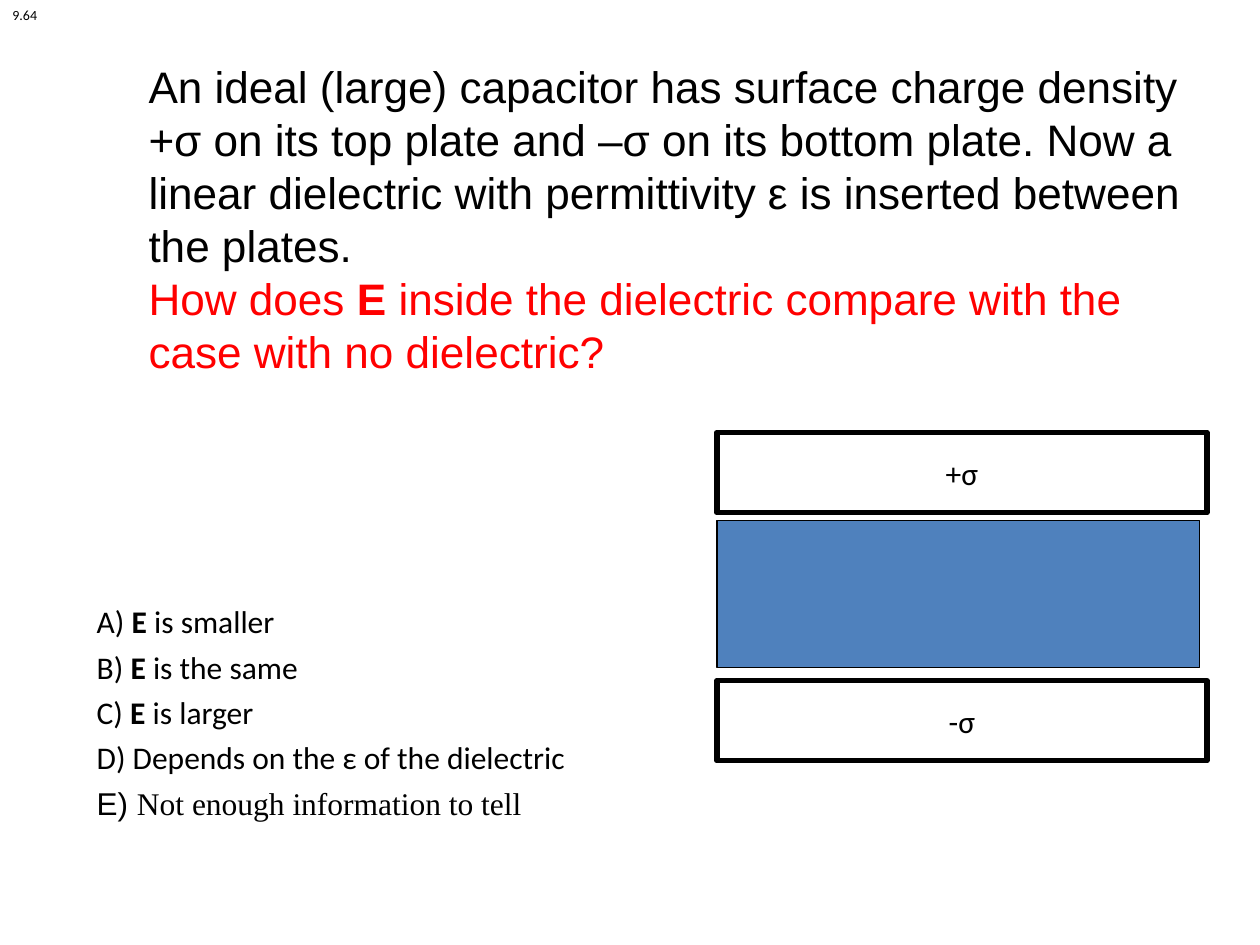
from dataclasses import dataclass
from typing import Optional

import pptx
import pptx.dml.color
import pptx.enum.shapes
import pptx.enum.text
import pptx.util

Pt = pptx.util.Pt
Color = pptx.dml.color.RGBColor
Anchor = pptx.enum.text.MSO_ANCHOR
Align = pptx.enum.text.PP_ALIGN


@dataclass(frozen=True)
class Theme:
    black: str = "000000"
    red: str = "FF0000"
    white: str = "FFFFFF"
    blue: str = "4F81BD"
    question_font: str = "Arial"
    body_font: str = "Calibri"
    serif_font: str = "Times New Roman"
    question_size: float = 25.2
    body_size: float = 18
    number_size: float = 8


THEME = Theme()


@dataclass(frozen=True)
class Area:
    left: float
    top: float
    width: float
    height: float

    def lengths(self) -> list:
        return [Pt(value) for value in (self.left, self.top, self.width, self.height)]


@dataclass(frozen=True)
class Piece:
    text: str
    font: str = THEME.body_font
    size: float = THEME.body_size
    color: str = THEME.black
    bold: bool = False


@dataclass(frozen=True)
class Layer:
    area: Area
    fill: str
    border: float
    label: Optional[str] = None


def question(text: str, color: str = THEME.black, bold: bool = False) -> Piece:
    return Piece(text, THEME.question_font, THEME.question_size, color, bold)


def field_option(letter: str, ending: str) -> list[Piece]:
    return [Piece(f"{letter}) "), Piece("E", bold=True), Piece(f" is {ending}")]


QUESTION = [
    [question("An ideal (large) capacitor has surface charge density +σ on its top plate "
              "and –σ on its bottom plate. Now a linear dielectric with permittivity ε "
              "is inserted between the plates.")],
    [question("How does ", THEME.red),
     question("E", THEME.red, bold=True),
     question(" inside the dielectric compare with the case with no dielectric?", THEME.red)],
]
OPTIONS = [
    field_option("A", "smaller"),
    field_option("B", "the same"),
    field_option("C", "larger"),
    [Piece("D) Depends on the ε of the dielectric")],
    [Piece("Ε) ", THEME.question_font),
     Piece("Not enough information to tell", THEME.serif_font)],
]
NUMBER = [[Piece("9.64", size=THEME.number_size)]]
CAPACITOR = [
    Layer(Area(409.7, 297.4, 275.8, 84.2), THEME.blue, 0.75),
    Layer(Area(409.7, 247, 280, 46), THEME.white, 3, "+σ"),
    Layer(Area(409.7, 388.8, 280, 46), THEME.white, 3, "-σ"),
]


def add_pieces(para, pieces: list[Piece]) -> None:
    for piece in pieces:
        span = para.add_run()
        span.text = piece.text
        span.font.name = piece.font
        span.font.size = Pt(piece.size)
        span.font.bold = piece.bold
        span.font.color.rgb = Color.from_string(piece.color)


def add_text(page, area: Area, paragraphs: list[list[Piece]], wrap: bool = True):
    frame = page.shapes.add_textbox(*area.lengths()).text_frame
    frame.word_wrap = wrap
    frame.vertical_anchor = Anchor.TOP
    for index, pieces in enumerate(paragraphs):
        para = frame.add_paragraph() if index else frame.paragraphs[0]
        add_pieces(para, pieces)
    return frame


def add_layer(page, layer: Layer) -> None:
    box = page.shapes.add_shape(
        pptx.enum.shapes.MSO_SHAPE.RECTANGLE, *layer.area.lengths())
    box.shadow.inherit = False
    box.fill.solid()
    box.fill.fore_color.rgb = Color.from_string(layer.fill)
    box.line.color.rgb = Color.from_string(THEME.black)
    box.line.width = Pt(layer.border)
    if layer.label:
        frame = box.text_frame
        frame.word_wrap = False
        frame.vertical_anchor = Anchor.MIDDLE
        para = frame.paragraphs[0]
        para.alignment = Align.CENTER
        add_pieces(para, [Piece(layer.label)])


def main() -> None:
    deck = pptx.Presentation()
    deck.slide_width, deck.slide_height = Pt(720), Pt(540)
    page = deck.slides.add_slide(deck.slide_layouts[6])

    title = add_text(page, Area(77.8, 33.1, 623.5, 213.8), QUESTION)
    title.margin_top = Pt(1)
    for para in title.paragraphs:
        para.line_spacing = Pt(30.3)

    options = add_text(page, Area(48.2, 340.6, 418.3, 133.2), OPTIONS)
    for para in options.paragraphs[1:]:
        para.line_spacing = 1.2

    for layer in CAPACITOR:
        add_layer(page, layer)

    add_text(page, Area(0, 0, 28.8, 17.3), NUMBER, wrap=False)
    deck.save("out.pptx")


if __name__ == "__main__":
    main()
